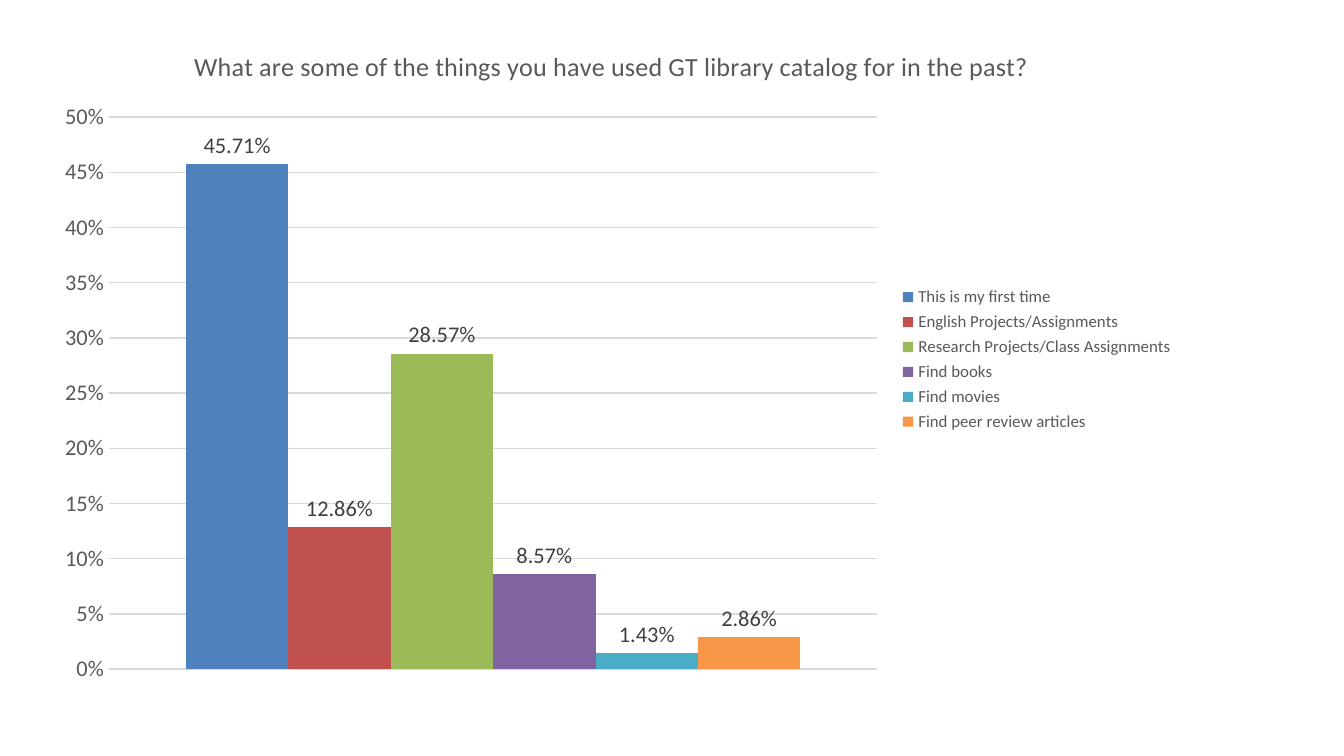
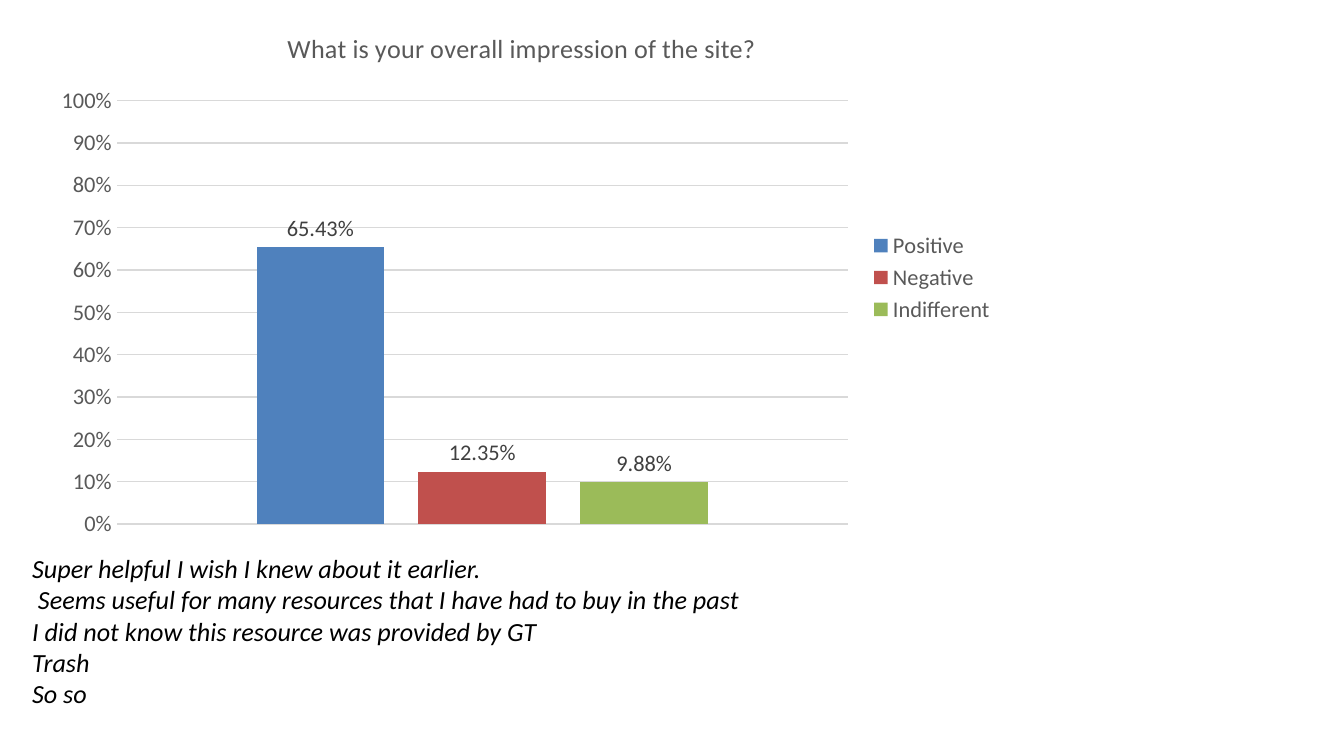
"""Build two survey-result slides with column charts."""
from pptx import Presentation
from pptx.chart.data import CategoryChartData
from pptx.dml.color import RGBColor
from pptx.enum.chart import XL_CHART_TYPE as CT, XL_LABEL_POSITION as LP
from pptx.enum.chart import XL_LEGEND_POSITION as LegendPos, XL_TICK_MARK as Tick
from pptx.enum.text import MSO_AUTO_SIZE as AutoSize
from pptx.oxml import parse_xml
from pptx.oxml.ns import nsdecls, qn
from pptx.util import Inches, Pt

FONT = "Calibri"
INK, GREY, LABEL, GRID = "000000", "595959", "404040", "D9D9D9"
SERIES = ["4F81BD", "C0504D", "9BBB59", "8064A2", "4BACC6", "F79646"]


def rgb(value):
    """Turn a hex string into a colour."""
    return RGBColor.from_string(value)


def style(font, size, color, italic=False):
    """Set the shared typeface with a size and colour."""
    font.name, font.size, font.bold, font.italic = FONT, Pt(size), False, italic
    font.color.rgb = rgb(color)


def set_layout(parent, index, inner=False, **fractions):
    """Fix the place of a chart part as fractions of the chart."""
    for old in parent.findall(qn("c:layout")):
        parent.remove(old)
    target = '<c:layoutTarget val="inner"/>' if inner else ""
    modes = '<c:xMode val="edge"/><c:yMode val="edge"/>'
    sizes = "".join(f'<c:{k} val="{v}"/>' for k, v in fractions.items())
    parent.insert(index, parse_xml(
        f'<c:layout {nsdecls("c")}><c:manualLayout>{target}{modes}{sizes}'
        '</c:manualLayout></c:layout>'))


def add_columns(s, box, title, title_at, plot, answers, top, step,
                gap, overlap=0, legend_size=12):
    """Add a column chart with one series for each answer."""
    data = CategoryChartData(number_format="0.00%")
    data.categories = ["1"]
    for name, share in answers:
        data.add_series(name, [share])
    chart = s.shapes.add_chart(CT.COLUMN_CLUSTERED, *map(Inches, box), data).chart
    style(chart.font, 10, INK)

    chart.has_title = True
    p = chart.chart_title.text_frame.paragraphs[0]
    p.text = title
    style(p.font, 14, GREY)
    set_layout(chart.chart_title._element, 1, x=title_at[0], y=title_at[1])
    x, y, w, h = plot
    set_layout(chart._chartSpace.chart.plotArea, 0, inner=True, x=x, y=y, w=w, h=h)

    chart.has_legend = True
    chart.legend.position = LegendPos.RIGHT
    chart.legend.include_in_layout = False
    style(chart.legend.font, legend_size, GREY)

    chart.category_axis.visible = False
    axis = chart.value_axis
    axis.minimum_scale, axis.maximum_scale, axis.major_unit = 0, top, step
    axis.major_tick_mark = axis.minor_tick_mark = Tick.NONE
    axis.tick_labels.number_format = "0%"
    axis.tick_labels.number_format_is_linked = False
    style(axis.tick_labels.font, 12, GREY)
    axis.format.line.fill.background()
    grid = axis.major_gridlines.format.line
    grid.color.rgb, grid.width = rgb(GRID), Pt(0.75)

    bars = chart.plots[0]
    bars.gap_width, bars.overlap, bars.vary_by_categories = gap, overlap, False
    for series, color in zip(bars.series, SERIES):
        series.invert_if_negative = False
        series.format.fill.solid()
        series.format.fill.fore_color.rgb = rgb(color)
        labels = series.data_labels
        labels.show_value, labels.position = True, LP.OUTSIDE_END
        labels.number_format, labels.number_format_is_linked = "0.00%", False
        style(labels.font, 12, LABEL)


def add_comments(s, box, comments):
    """Add the quoted comments, one to a paragraph."""
    tf = s.shapes.add_textbox(*map(Inches, box)).text_frame
    tf.word_wrap, tf.auto_size = True, AutoSize.SHAPE_TO_FIT_TEXT
    for i, comment in enumerate(comments):
        p = tf.add_paragraph() if i else tf.paragraphs[0]
        p.text = comment
        style(p.font, 14, INK, italic=True)


def usage_slide(prs):
    """Show what the catalog was used for."""
    s = prs.slides.add_slide(prs.slide_layouts[6])
    add_columns(
        s, (0.3, 0.17, 8.53, 5.01),
        "What are some of the things you have used GT library catalog for in the past?",
        (0.13, 0.03), (0.06, 0.14, 0.67, 0.82),
        [("This is my first time", 0.4571),
         ("English Projects/Assignments", 0.1286),
         ("Research Projects/Class Assignments", 0.2857),
         ("Find books", 0.0857),
         ("Find movies", 0.0143),
         ("Find peer review articles ", 0.0286)],
        top=0.5, step=0.05, gap=150, legend_size=9)


def impression_slide(prs):
    """Show the overall impression with comments."""
    s = prs.slides.add_slide(prs.slide_layouts[6])
    add_columns(
        s, (0.29, 0.07, 7.25, 3.99),
        "What is your overall impression of the site?",
        (0.25, 0.03), (0.08, 0.17, 0.75, 0.79),
        [("Positive", 0.6543), ("Negative", 0.1235), ("Indifferent ", 0.0988)],
        top=1, step=0.1, gap=219, overlap=-27)
    add_comments(s, (0.14, 4.06, 8.52, 1.58), [
        "Super helpful I wish I knew about it earlier.",
        " Seems useful for many resources that I have had to buy in the past",
        "I did not know this resource was provided by GT",
        "Trash",
        "So so"])


def main():
    """Build and save the slides."""
    prs = Presentation()
    prs.slide_width = Inches(10)
    prs.slide_height = prs.slide_width * 9 // 16
    usage_slide(prs)
    impression_slide(prs)
    prs.save("out.pptx")


if __name__ == "__main__":
    main()
